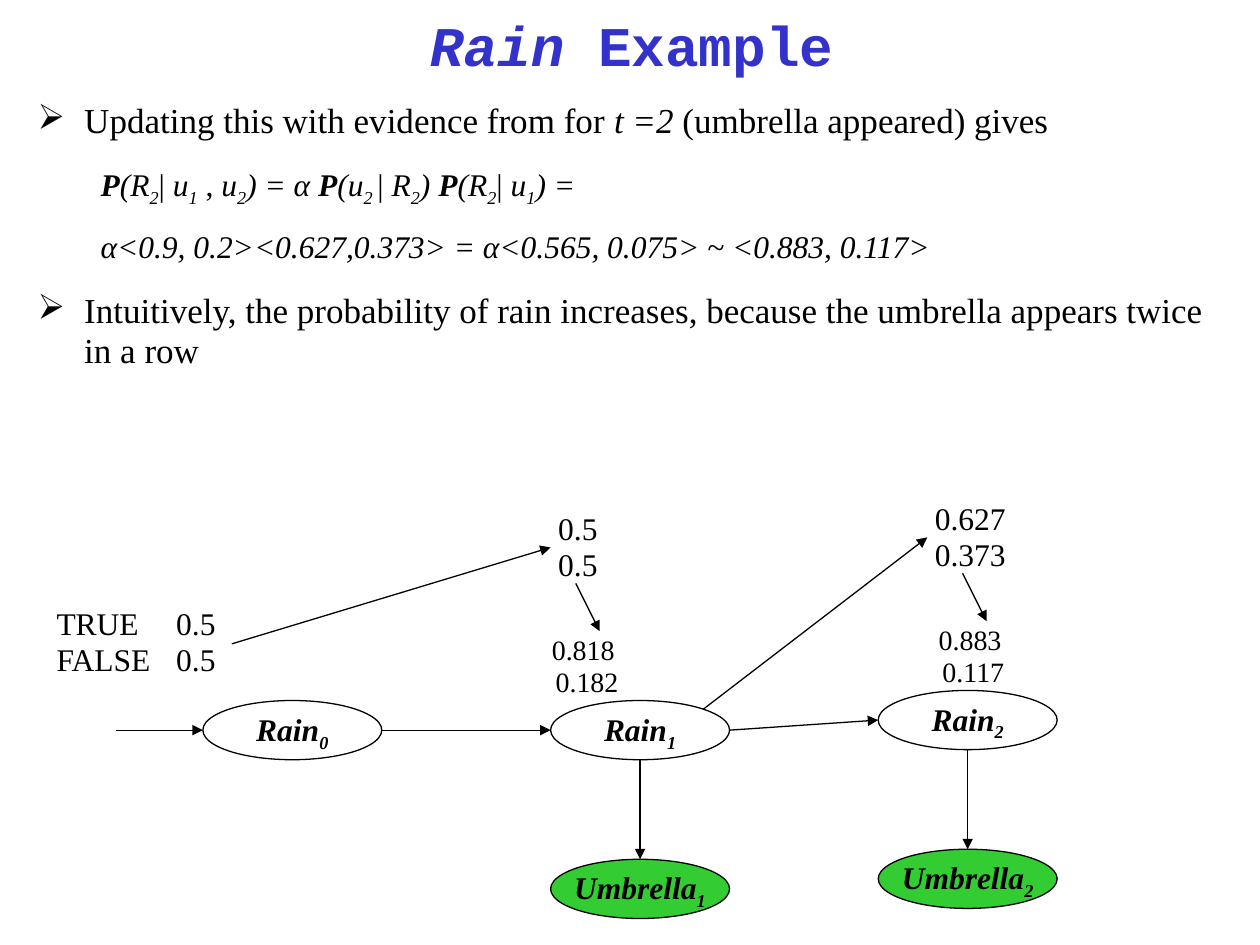
from dataclasses import dataclass

from lxml.etree import SubElement
from pptx import Presentation
from pptx.dml.color import RGBColor as RGB
from pptx.enum.shapes import MSO_CONNECTOR as Connector, MSO_SHAPE as Shape
from pptx.enum.text import MSO_ANCHOR as Anchor, PP_ALIGN as Align
from pptx.oxml.ns import qn
from pptx.util import Inches, Pt


@dataclass(frozen=True)
class Theme:
    title_font: str = "Courier New"
    font: str = "Times New Roman"
    title_color: RGB = RGB(0x33, 0x33, 0xCC)
    ink: RGB = RGB(0, 0, 0)
    evidence: RGB = RGB(0x33, 0xCC, 0x33)
    title_size: int = 32
    body_size: int = 20
    text_size: int = 18
    small_size: int = 16
    line_width: float = 0.75
    line_spacing: float = 0.95


THEME = Theme()

# Runs are (text, style): b = bold, i = italic, s = subscript
TITLE = [("Rain", "bi"), (" Example", "b")]
BODY = [
    ("bullet", [("Updating this with evidence from for ", ""), ("t =2", "i"),
                (" (umbrella appeared) gives", "")]),
    ("formula", [("P", "bi"), ("(R", "i"), ("2", "is"), ("| ", ""), ("u", "i"), ("1", "is"),
                 (" , ", ""), ("u", "i"), ("2", "is"), (") = α ", "i"),
                 ("P", "bi"), ("(u", "i"), ("2 ", "is"), ("| ", ""), ("R", "i"), ("2", "is"),
                 (") ", "i"), ("P", "bi"), ("(R", "i"), ("2", "is"), ("| ", ""),
                 ("u", "i"), ("1", "is"), (") =", "i")]),
    ("formula", [("α<0.9, 0.2><0.627,0.373> = α<0.565, 0.075> ~ <0.883, 0.117>", "i")]),
    ("bullet", [("Intuitively, the probability of rain increases, "
                 "because the umbrella appears twice in a row", "")]),
]
# kind: (type size, space before, left margin, first-line indent)
LEVELS = {"bullet": (THEME.body_size, 15, 0.37, -0.37),
          "formula": (THEME.text_size, 13.5, 0.81, -0.31)}

START = ["TRUE\t0.5", "FALSE\t0.5"]
RAIN_0 = (1.61, 5.56)
STEPS = [
    {"index": "1", "rain": (4.37, 5.56), "predicted": ["0.5", "0.5"], "updated": ["0.818", "0.182"],
     "predicted_left": 4.37, "predicted_width": 0.39, "updated_left": 4.13, "update_x": 4.57},
    {"index": "2", "rain": (6.97, 5.48), "predicted": ["0.627", "0.373"], "updated": ["0.883", "0.117"],
     "predicted_left": 7.36, "predicted_width": 0.71, "updated_left": 7.2, "update_x": 7.64},
]
NODE_WIDTH, NODE_HEIGHT = 1.42, 0.47
UMBRELLA_DROP = 1.26
# Distances above the top of a rain node
PREDICTED_RISE, PREDICTED_HEIGHT, UPDATED_RISE = 1.5, 0.57, 0.55


def add_runs(para, runs, size, font=THEME.font, color=THEME.ink):
    para.line_spacing = THEME.line_spacing
    for text, style in runs:
        span = para.add_run()
        span.text = text
        span.font.name, span.font.size = font, Pt(size)
        span.font.color.rgb = color
        span.font.bold, span.font.italic = "b" in style, "i" in style
        if "s" in style:
            span.font._element.set("baseline", "-25000")


def set_indent(para, left, first=0):
    properties = para._p.get_or_add_pPr()
    properties.set("marL", str(Inches(left)))
    properties.set("indent", str(Inches(first)))
    return properties


def paragraphs(frame, items):
    """Yield one paragraph of the frame with each item."""
    for number, item in enumerate(items):
        yield (frame.add_paragraph() if number else frame.paragraphs[0]), item


def add_box(page, left, top, width, height, inset=(0, 0)):
    box = page.shapes.add_textbox(*map(Inches, (left, top, width, height)))
    frame = box.text_frame
    frame.word_wrap = True
    frame.margin_left = frame.margin_right = Inches(inset[0])
    frame.margin_top = frame.margin_bottom = Inches(inset[1])
    return frame


def add_arrow(page, start, end):
    arrow = page.shapes.add_connector(Connector.STRAIGHT, *map(Inches, (*start, *end)))
    arrow.line.color.rgb = THEME.ink
    arrow.line.width = Pt(THEME.line_width)
    SubElement(arrow.line._get_or_add_ln(), qn("a:tailEnd"), type="triangle")
    SubElement(arrow._element.spPr, qn("a:effectLst"))


def add_node(page, name, index, left, top, fill=None):
    node = page.shapes.add_shape(
        Shape.OVAL, *map(Inches, (left, top, NODE_WIDTH, NODE_HEIGHT)))
    node.shadow.inherit = False
    if fill is None:
        node.fill.background()
    else:
        node.fill.solid()
        node.fill.fore_color.rgb = fill
    node.line.color.rgb = THEME.ink
    node.line.width = Pt(THEME.line_width)
    frame = node.text_frame
    frame.word_wrap = False
    frame.vertical_anchor = Anchor.MIDDLE
    para = frame.paragraphs[0]
    para.alignment = Align.CENTER
    add_runs(para, [(name, "bi"), (index, "bis")], THEME.text_size)


def add_title(page):
    frame = add_box(page, 0.35, 0, 9.33, 0.75)
    frame.vertical_anchor = Anchor.MIDDLE
    para = frame.paragraphs[0]
    para.alignment = Align.CENTER
    add_runs(para, TITLE, THEME.title_size, THEME.title_font, THEME.title_color)


def add_body(page):
    frame = add_box(page, 0.2, 0.76, 9.69, 1.26, (0.1, 0.05))
    for para, (kind, runs) in paragraphs(frame, BODY):
        size, space, left, first = LEVELS[kind]
        add_runs(para, runs, size)
        para.space_before = Pt(space)
        properties = set_indent(para, left, first)
        if kind == "bullet":
            SubElement(properties, qn("a:buChar"), char="➢")
        else:
            para.level = 1
            SubElement(properties, qn("a:buNone"))


def add_start(page):
    frame = add_box(page, 0.35, 4.77, 1.48, 0.67, (0.1, 0.05))
    for para, text in paragraphs(frame, START):
        add_runs(para, [(text, "")], THEME.text_size)
        tabs = SubElement(para._p.get_or_add_pPr(), qn("a:tabLst"))
        SubElement(tabs, qn("a:tab"), pos=str(Inches(0.95)), algn="l")


def add_step(page, step, previous, source):
    """Draw one time step, fed by the previous rain node and a source of belief."""
    left, top = step["rain"]
    center, middle = left + NODE_WIDTH / 2, top + NODE_HEIGHT / 2
    umbrella_top = top + UMBRELLA_DROP
    add_node(page, "Rain", step["index"], left, top)
    add_node(page, "Umbrella", step["index"], left, umbrella_top, THEME.evidence)
    add_arrow(page, (center, top + NODE_HEIGHT), (center, umbrella_top))
    add_arrow(page, (previous[0] + NODE_WIDTH, previous[1] + NODE_HEIGHT / 2), (left, middle))

    predicted_left, predicted_top = step["predicted_left"], top - PREDICTED_RISE
    frame = add_box(page, predicted_left, predicted_top, step["predicted_width"], PREDICTED_HEIGHT)
    for para, value in paragraphs(frame, step["predicted"]):
        add_runs(para, [(value, "")], THEME.text_size)
        set_indent(para, 0.06)

    updated_left, updated_top = step["updated_left"], top - UPDATED_RISE
    frame = add_box(page, updated_left, updated_top + 0.03, 1.26, 0.54)
    for (para, value), indent in zip(paragraphs(frame, step["updated"]), (0.25, 0.28)):
        add_runs(para, [(value, "")], THEME.small_size)
        set_indent(para, indent)

    add_arrow(page, source, (predicted_left, predicted_top + PREDICTED_HEIGHT / 2))
    add_arrow(page, (step["update_x"], predicted_top + PREDICTED_HEIGHT),
              (updated_left + 0.63, updated_top))


def main():
    deck = Presentation()
    deck.slide_width, deck.slide_height = Inches(10), Inches(7.5)
    page = deck.slides.add_slide(deck.slide_layouts[6])
    add_title(page)
    add_body(page)
    add_start(page)
    left, top = RAIN_0
    add_node(page, "Rain", "0", left, top)
    middle = top + NODE_HEIGHT / 2
    add_arrow(page, (0.92, middle), (left, middle))

    previous, source = RAIN_0, (1.84, 5.11)
    for step in STEPS:
        add_step(page, step, previous, source)
        previous = step["rain"]
        source = (previous[0] + 1.21, previous[1] + 0.07)
    deck.save("out.pptx")


if __name__ == "__main__":
    main()
